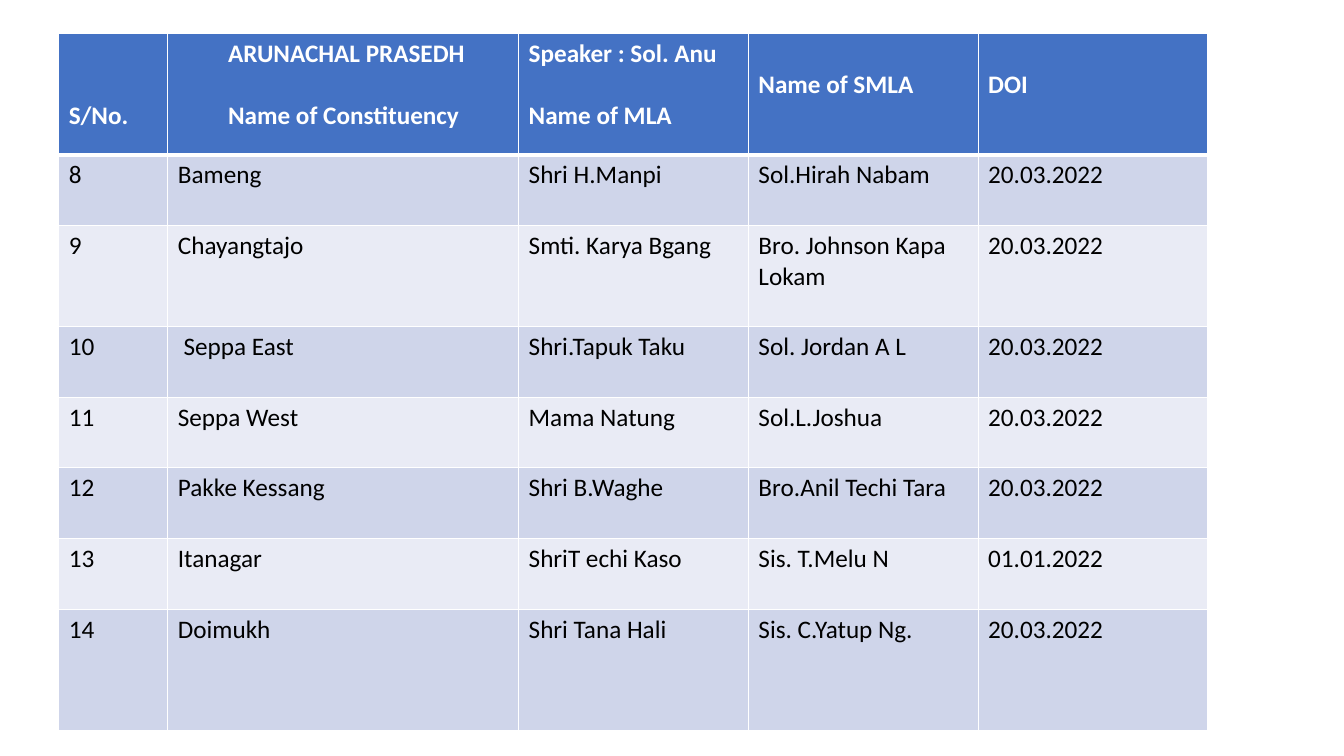
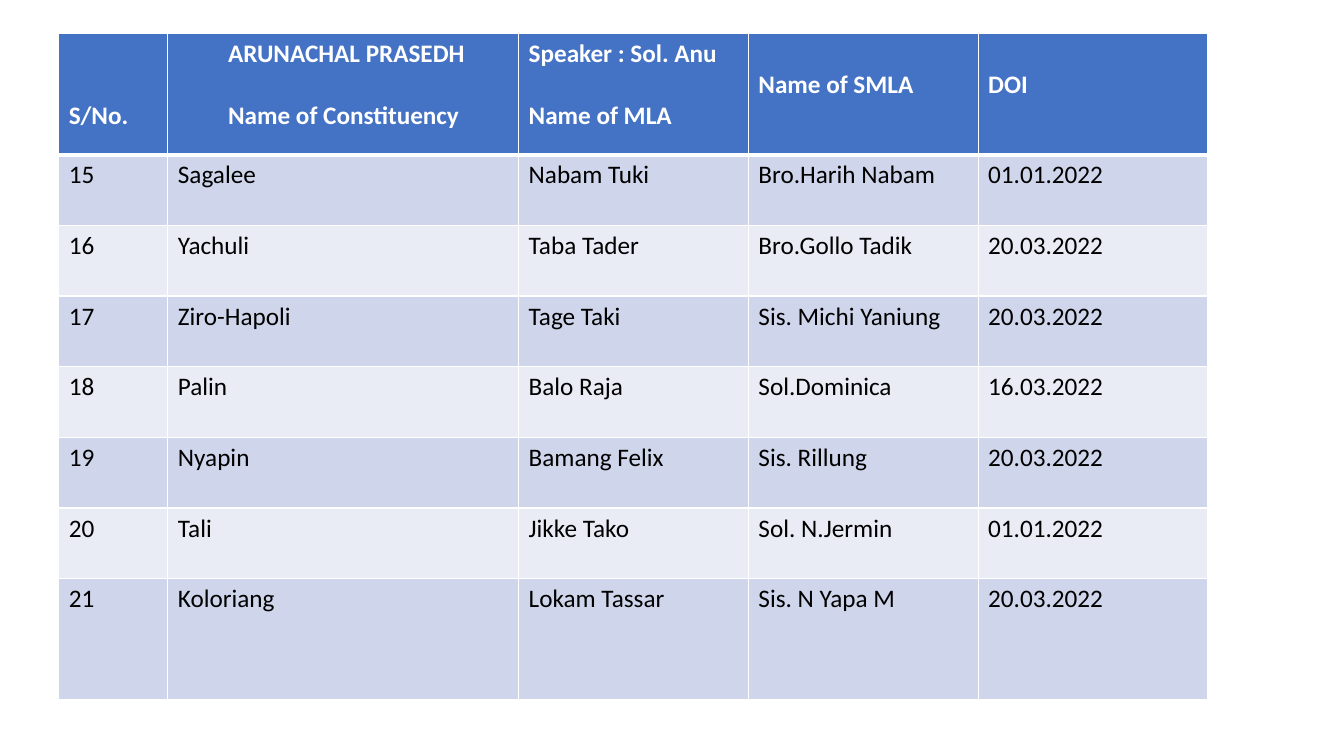
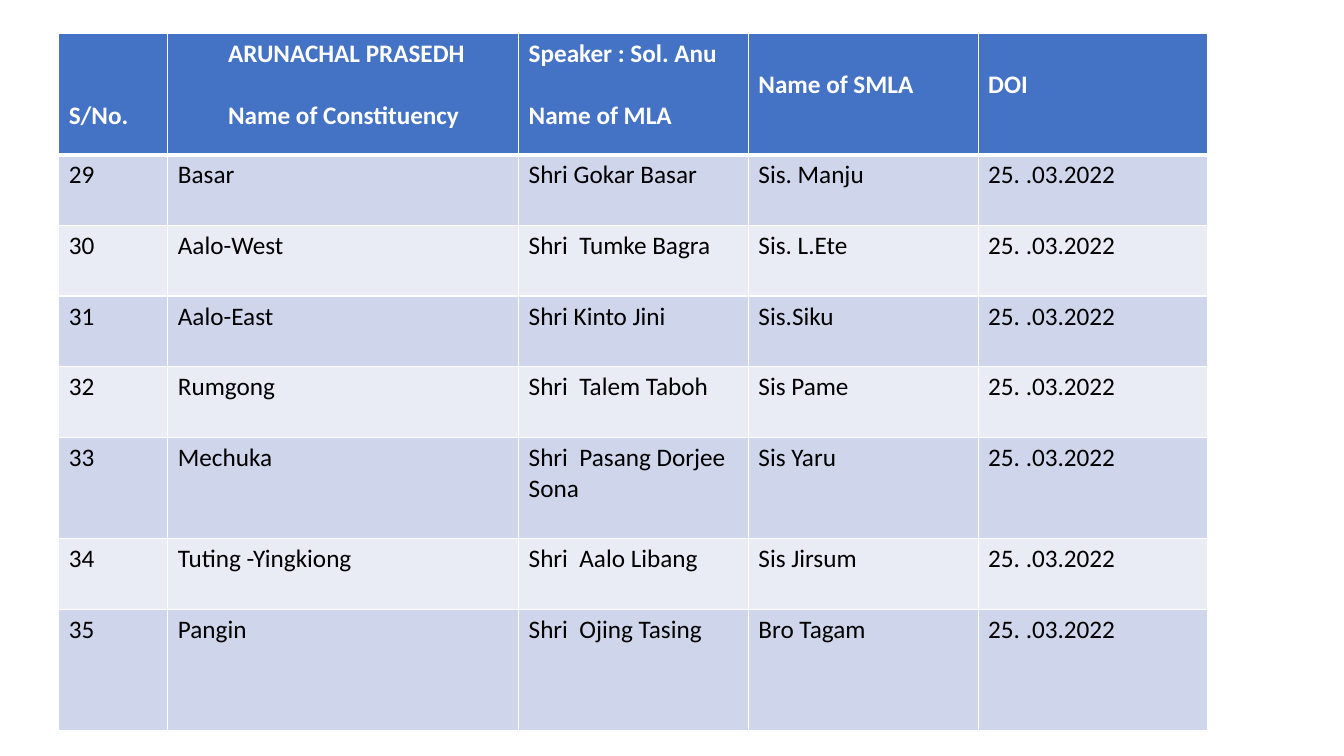
from lxml.etree import SubElement
from pptx import Presentation
from pptx.dml.color import RGBColor
from pptx.oxml.ns import qn
from pptx.util import Cm, Pt

HEADINGS = [
    (2, ["S/No."]),
    (0, ["ARUNACHAL PRASEDH", "Name of Constituency"]),
    (0, ["Speaker : Sol. Anu", "Name of MLA"]),
    (1, ["Name of SMLA"]),
    (1, ["DOI"]),
]

# Each page: first serial number, then constituency, MLA, SMLA and date
PAGES = [
    (8, [
        ("Bameng", "Shri H.Manpi", "Sol.Hirah Nabam", "20.03.2022"),
        ("Chayangtajo", "Smti. Karya Bgang", "Bro. Johnson Kapa Lokam", "20.03.2022"),
        (" Seppa East", "Shri.Tapuk Taku", "Sol. Jordan A L", "20.03.2022"),
        ("Seppa West", "Mama Natung", "Sol.L.Joshua", "20.03.2022"),
        ("Pakke Kessang", "Shri B.Waghe", "Bro.Anil Techi Tara", "20.03.2022"),
        ("Itanagar", "ShriT echi Kaso", "Sis. T.Melu N", "01.01.2022"),
        ("Doimukh", "Shri Tana Hali", "Sis. C.Yatup Ng.", "20.03.2022"),
    ]),
    (15, [
        ("Sagalee", "Nabam Tuki", "Bro.Harih Nabam", "01.01.2022"),
        ("Yachuli", "Taba Tader", "Bro.Gollo Tadik", "20.03.2022"),
        ("Ziro-Hapoli", "Tage Taki", "Sis. Michi Yaniung", "20.03.2022"),
        ("Palin", "Balo Raja", "Sol.Dominica", "16.03.2022"),
        ("Nyapin", "Bamang Felix", "Sis. Rillung", "20.03.2022"),
        ("Tali", "Jikke Tako", "Sol. N.Jermin", "01.01.2022"),
        ("Koloriang", "Lokam Tassar", "Sis. N Yapa M", "20.03.2022"),
    ]),
    (29, [
        ("Basar", "Shri Gokar Basar", "Sis. Manju", "25. .03.2022"),
        ("Aalo-West", "Shri  Tumke Bagra", "Sis. L.Ete", "25. .03.2022"),
        ("Aalo-East", "Shri Kinto Jini", "Sis.Siku", "25. .03.2022"),
        ("Rumgong", "Shri  Talem Taboh", "Sis Pame", "25. .03.2022"),
        ("Mechuka", "Shri  Pasang Dorjee Sona", "Sis Yaru", "25. .03.2022"),
        ("Tuting -Yingkiong", "Shri  Aalo Libang", "Sis Jirsum", "25. .03.2022"),
        ("Pangin", "Shri  Ojing Tasing", "Bro Tagam", "25. .03.2022"),
    ]),
]


def color(hex_text):
    return RGBColor.from_string(hex_text)


class Deck:
    FONT, SIZE = "Calibri", Pt(18)
    LINE = Pt(22)
    WHITE, BLACK, BLUE = "FFFFFF", "000000", "4472C4"
    BANDS = ["CFD5EA", "E9EBF5"]
    LEFT, TOP = Cm(1.48), Cm(0.85)
    COLUMNS = [Cm(2.75), Cm(8.84)] + [Cm(5.79)] * 3
    TALL, NORMAL, WRAPPED = Cm(3.05), Cm(1.78), Cm(2.55)
    WRAP_LENGTH = 20
    MARGIN, INDENT = Cm(0.13), Cm(1.52)

    def __init__(self):
        self.presentation = Presentation()
        self.presentation.slide_width = Cm(33.87)
        self.presentation.slide_height = Cm(19.05)
        self.slide = None

    def add_slide(self):
        self.slide = self.presentation.slides.add_slide(self.presentation.slide_layouts[6])

    def borders(self, cell, top, bottom):
        """Draw white cell borders; top and bottom are widths in points."""
        properties = cell._tc.get_or_add_tcPr()
        for side, width in (("L", 1), ("R", 1), ("T", top), ("B", bottom)):
            line = SubElement(properties, qn(f"a:ln{side}"), w=str(Pt(width)))
            fill = SubElement(line, qn("a:solidFill"))
            SubElement(fill, qn("a:srgbClr"), val=self.WHITE)

    def cell(self, cell, lines, fill, text_color, bold=False, top=1, bottom=1):
        self.borders(cell, top, bottom)
        cell.fill.solid()
        cell.fill.fore_color.rgb = color(fill)
        frame = cell.text_frame
        for index, text in enumerate(lines):
            paragraph = frame.add_paragraph() if index else frame.paragraphs[0]
            if index:
                paragraph.space_before = self.LINE
            run = paragraph.add_run()
            run.text = text
            run.font.name, run.font.size = self.FONT, self.SIZE
            run.font.bold = bold
            run.font.color.rgb = color(text_color)

    def row_heights(self, rows):
        middle = [self.WRAPPED if max(map(len, row[1:])) > self.WRAP_LENGTH else self.NORMAL
                  for row in rows[:-1]]
        return [self.TALL] + middle + [self.TALL]

    def member_table(self, first_number, rows):
        heights = self.row_heights(rows)
        table = self.slide.shapes.add_table(
            len(heights), len(self.COLUMNS), self.LEFT, self.TOP,
            sum(self.COLUMNS), sum(heights)).table
        table.horz_banding = False
        for column, width in zip(table.columns, self.COLUMNS):
            column.width = width
        for row, height in zip(table.rows, heights):
            row.height = height

        for column, (lines_above, lines) in enumerate(HEADINGS):
            heading = table.cell(0, column)
            self.cell(heading, lines, self.BLUE, self.WHITE, bold=True, bottom=3)
            heading.margin_top = self.MARGIN + lines_above * self.LINE
        table.cell(0, 1).margin_left = self.INDENT

        for index, values in enumerate(rows):
            for column, text in enumerate((str(first_number + index), *values)):
                self.cell(table.cell(index + 1, column), [text], self.BANDS[index % 2],
                          self.BLACK, top=1 if index else 3)


def main():
    deck = Deck()
    for first_number, rows in PAGES:
        deck.add_slide()
        deck.member_table(first_number, rows)
    deck.presentation.save("out.pptx")


if __name__ == "__main__":
    main()
